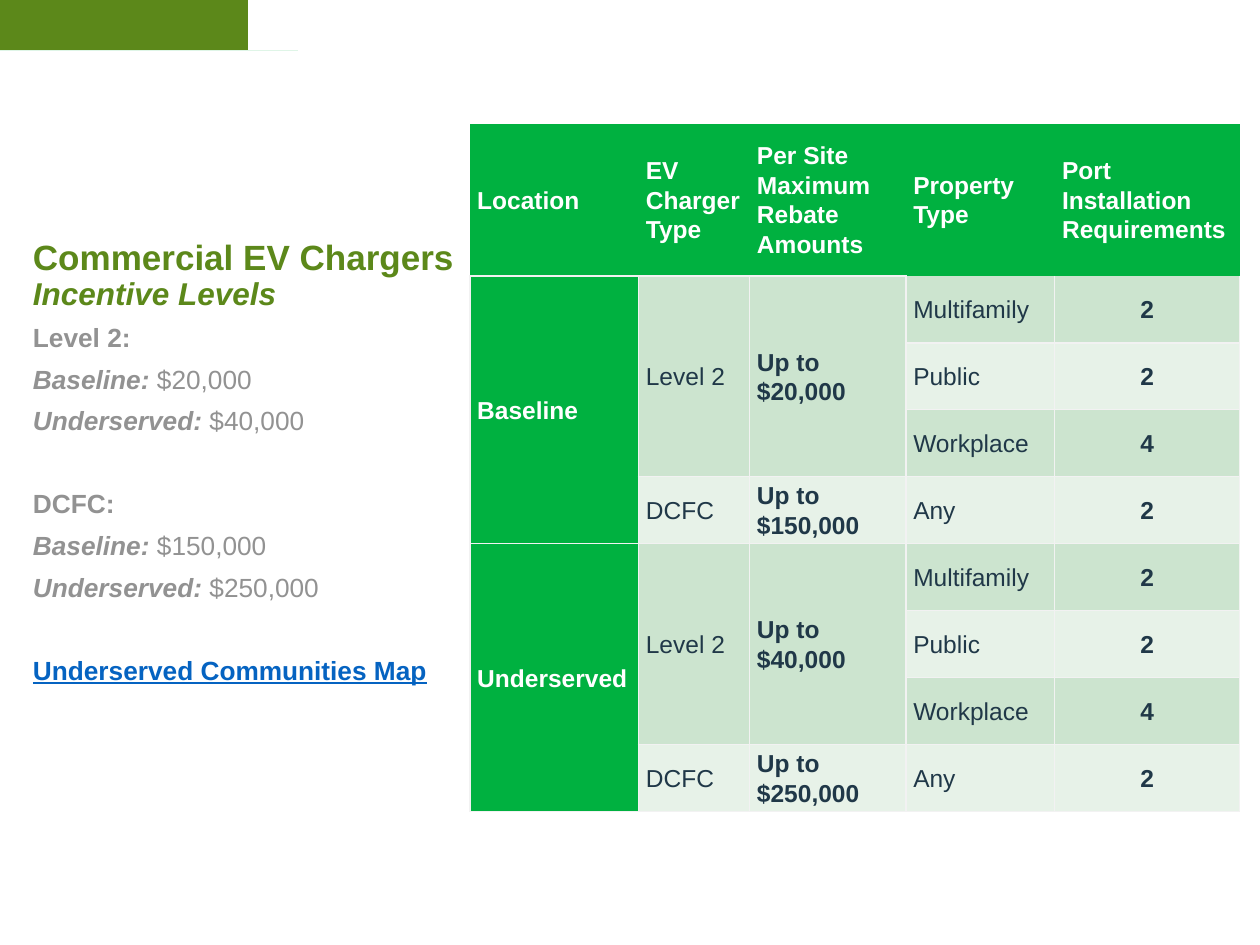
import pptx
import pptx.dml.color
import pptx.enum.text
import pptx.oxml
import pptx.oxml.ns
import pptx.util
from lxml import etree
from pptx.util import Cm, Pt

COLORS = {
    "green": "00B140", "olive": "5C881A", "grey": "929292", "link": "0563C1",
    "navy": "203848", "white": "FFFFFF", "border": "F2F2F2",
    "band_dark": "CCE4CF", "band_light": "E7F2E8",
}
NO_GRID_STYLE = "{2D5ABB26-0587-4C30-8999-92F81FD0307C}"


def rgb(name):
    return pptx.dml.color.RGBColor.from_string(COLORS[name])


def add_text(paragraph, text, size=14, color="navy", bold=False, italic=False,
             underline=False, spacing=0.9, before=0, align="LEFT"):
    paragraph.line_spacing = spacing
    paragraph.space_before = Pt(before)
    paragraph.alignment = getattr(pptx.enum.text.PP_ALIGN, align)
    run = paragraph.add_run()
    run.text = text
    run.font.name = "Arial"
    run.font.size = Pt(size)
    run.font.bold = bold
    run.font.italic = italic
    run.font.underline = underline
    run.font.color.rgb = rgb(color)


deck = pptx.Presentation()
deck.slide_width, deck.slide_height = Cm(25.4), Cm(19.05)
slide = deck.slides.add_slide(deck.slide_layouts[1])

# Corner ribbons
ribbons = [
    ("green", [(0, 0.63), (5.97, 0.63), (6.45, 1.31), (0, 1.31)]),
    ("olive", [(0, 0), (4.78, 0), (5.24, 0.66), (0, 0.63)]),
]
for color, corners in ribbons:
    outline = slide.shapes.build_freeform(*corners[0], scale=Cm(1))
    outline.add_line_segments(corners[1:], close=True)
    ribbon = outline.convert_to_shape()
    ribbon.shadow.inherit = False
    ribbon.fill.solid()
    ribbon.fill.fore_color.rgb = rgb(color)
    ribbon.line.fill.background()

# Title
heading = slide.shapes.title
heading.left, heading.top, heading.width, heading.height = Cm(0.41), Cm(4.67), Cm(9.91), Cm(1.75)
heading.text_frame.auto_size = pptx.enum.text.MSO_AUTO_SIZE.NONE
heading.text_frame.vertical_anchor = pptx.enum.text.MSO_ANCHOR.BOTTOM
heading_line = heading.text_frame.paragraphs[0]
add_text(heading_line, "Commercial EV Chargers", size=20, color="olive", bold=True)
heading_line.add_line_break()
add_text(heading_line, "Incentive Levels", size=18, color="olive", bold=True, italic=True)

# Incentive summary: label, amount, label in italics, space before
summary = slide.placeholders[1]
summary.left, summary.top, summary.width, summary.height = Cm(0.41), Cm(6.43), Cm(9.09), Cm(9.58)
summary.text_frame.auto_size = pptx.enum.text.MSO_AUTO_SIZE.NONE
LINE_GAP, GROUP_GAP = 7.5, 31.2
incentives = [
    ("Level 2:", "", False, LINE_GAP),
    ("Baseline:", " $20,000", True, LINE_GAP),
    ("Underserved:", " $40,000", True, LINE_GAP),
    ("DCFC:", "", False, GROUP_GAP),
    ("Baseline:", " $150,000", True, LINE_GAP),
    ("Underserved:", " $250,000", True, LINE_GAP),
    ("Underserved Communities Map", "", False, GROUP_GAP),
]
for index, (label, amount, italic, gap) in enumerate(incentives):
    frame = summary.text_frame
    line = frame.add_paragraph() if index else frame.paragraphs[0]
    is_map = label.endswith("Map")
    add_text(line, label, size=15, color="link" if is_map else "grey", bold=True,
             italic=italic, underline=is_map, before=gap)
    if amount:
        add_text(line, amount, size=15, color="grey", before=gap)
    properties = line._p.get_or_add_pPr()
    properties.set("marL", "0")
    properties.set("indent", "0")
    etree.SubElement(properties, pptx.oxml.ns.qn("a:buNone"))

# Rebate table contents
rows = [["Location", "EV Charger Type", "Per Site Maximum Rebate Amounts",
         "Property Type", "Port Installation Requirements"]]
for location, level2_limit, dcfc_limit in [("Baseline", "$20,000", "$150,000"),
                                           ("Underserved", "$40,000", "$250,000")]:
    rows += [
        [location, "Level 2", f"Up to {level2_limit}", "Multifamily", "2"],
        ["", "", "", "Public", "2"],
        ["", "", "", "Workplace", "4"],
        ["", "DCFC", f"Up to {dcfc_limit}", "Any", "2"],
    ]

column_widths = [3.4, 2.24, 3.15, 3, 3.73]
row_heights = [3.07] + [1.35] * 8
rebates = slide.shapes.add_table(len(rows), len(column_widths), Cm(9.47), Cm(2.49),
                                 Cm(sum(column_widths)), Cm(sum(row_heights))).table
rebates.horz_banding = False
rebates._tbl.tblPr.find(pptx.oxml.ns.qn("a:tableStyleId")).text = NO_GRID_STYLE
for column, width in zip(rebates.columns, column_widths):
    column.width = Cm(width)
for row, height in zip(rebates.rows, row_heights):
    row.height = Cm(height)

# Merge each location block and its Level 2 rows
for first in (1, 5):
    rebates.cell(first, 0).merge(rebates.cell(first + 3, 0))
    for c in (1, 2):
        rebates.cell(first, c).merge(rebates.cell(first + 2, c))

# Cell text, fills and borders
for r, texts in enumerate(rows):
    for c, text in enumerate(texts):
        cell = rebates.cell(r, c)
        on_green = r == 0 or c == 0
        cell.margin_left = cell.margin_right = Cm(0.15)
        cell.margin_top = cell.margin_bottom = 0
        cell.vertical_anchor = pptx.enum.text.MSO_ANCHOR.MIDDLE
        cell.fill.solid()
        cell.fill.fore_color.rgb = rgb(
            "green" if on_green else "band_dark" if r % 2 else "band_light")
        if text:
            add_text(cell.text_frame.paragraphs[0], text,
                     color="white" if on_green else "navy",
                     bold=on_green or c in (2, 4), spacing=1.07,
                     align="CENTER" if r and c == 4 else "LEFT")

        if r == 0:
            sides = "B" if c < 3 else ""
        else:
            sides = "LRB" if r == 1 and c > 2 else "LRTB"
        for position, side in enumerate(sides):
            cell._tc.get_or_add_tcPr().insert(position, pptx.oxml.parse_xml(
                f'<a:ln{side} {pptx.oxml.ns.nsdecls("a")} w="12700"><a:solidFill>'
                f'<a:srgbClr val="{COLORS["border"]}"/></a:solidFill></a:ln{side}>'))

deck.save("out.pptx")
